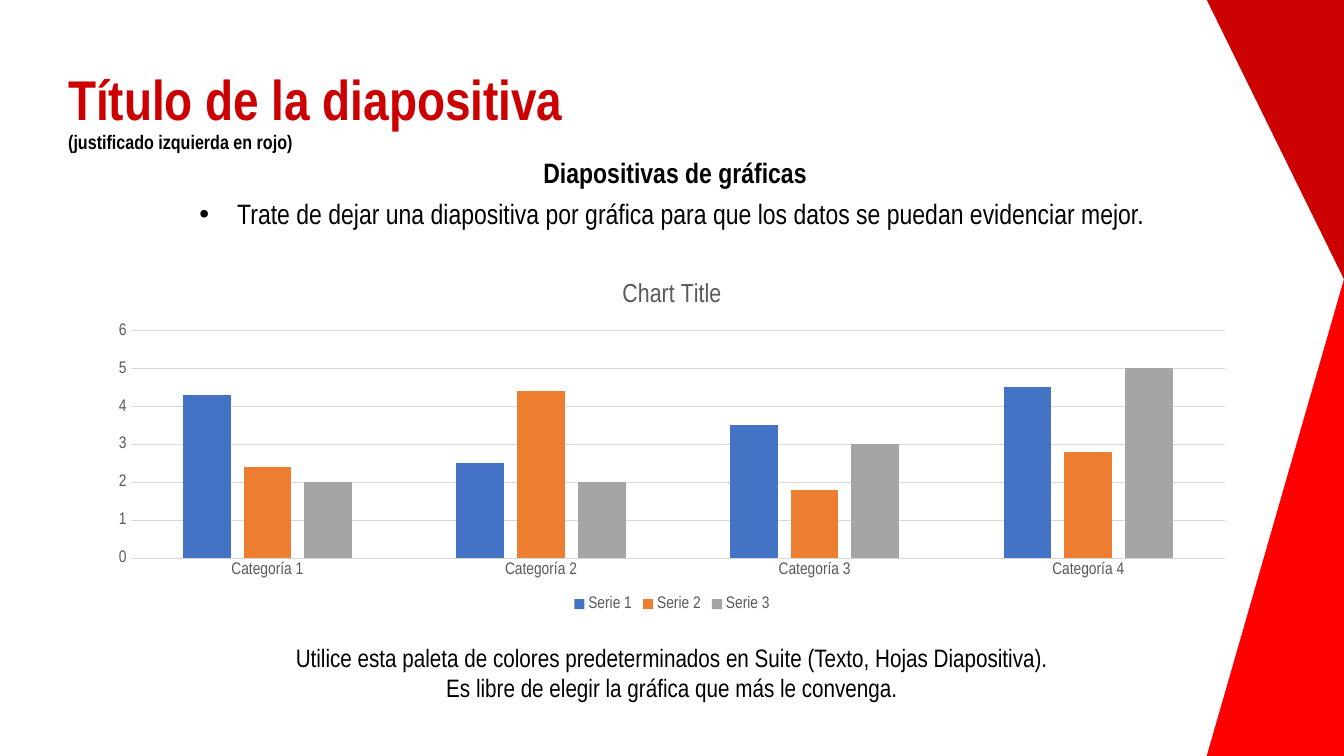
import pptx
import pptx.chart.data
import pptx.dml.color
import pptx.enum.chart
import pptx.enum.shapes
import pptx.enum.text
import pptx.oxml
import pptx.oxml.ns
import pptx.util

Pt = pptx.util.Pt
RGBColor = pptx.dml.color.RGBColor
ALIGN = pptx.enum.text.PP_ALIGN

FONT = "Arial Narrow"
DARK_RED = RGBColor(0xCC, 0x00, 0x00)
RED = RGBColor(0xFF, 0x00, 0x00)
BLACK = RGBColor(0x00, 0x00, 0x00)
GRAY = RGBColor(0x59, 0x59, 0x59)
LIGHT_GRAY = RGBColor(0xD9, 0xD9, 0xD9)
BLUE = RGBColor(0x44, 0x72, 0xC4)
ORANGE = RGBColor(0xED, 0x7D, 0x31)
MID_GRAY = RGBColor(0xA5, 0xA5, 0xA5)

SLIDE_WIDTH, SLIDE_HEIGHT = 960, 540
BAND_WIDTH, BAND_SPLIT = 98, 199.5

CATEGORIES = ["Categoría 1", "Categoría 2", "Categoría 3", "Categoría 4"]
SERIES = [
    ("Serie 1", (4.3, 2.5, 3.5, 4.5), BLUE),
    ("Serie 2", (2.4, 4.4, 1.8, 2.8), ORANGE),
    ("Serie 3", (2, 2, 3, 5), MID_GRAY),
]


def style_font(font, size, color, bold=False):
    font.name = FONT
    font.size = Pt(size)
    font.bold = bold
    font.color.rgb = color


def add_paragraph(frame, text, size, color, bold=False, align=ALIGN.CENTER):
    """Fill the empty first paragraph of the frame, or append a new one."""
    paragraph = frame.paragraphs[0]
    if paragraph.runs:
        paragraph = frame.add_paragraph()
    paragraph.alignment = align
    run = paragraph.add_run()
    run.text = text
    style_font(run.font, size, color, bold)
    return paragraph


def set_indent(paragraph, margin, hanging):
    properties = paragraph._p.get_or_add_pPr()
    properties.set("marL", str(Pt(margin)))
    properties.set("indent", str(-Pt(hanging)))
    return properties


def add_text_frame(slide, left, top, width, height):
    box = slide.shapes.add_textbox(Pt(left), Pt(top), Pt(width), Pt(height))
    box.text_frame.word_wrap = True
    return box.text_frame


def add_side_band(slide, left, top, width, height):
    """Two right triangles that meet in a point at the right edge."""
    parts = [(top, BAND_SPLIT, DARK_RED), (top + BAND_SPLIT, height - BAND_SPLIT, RED)]
    for part_top, part_height, color in parts:
        triangle = slide.shapes.add_shape(
            pptx.enum.shapes.MSO_SHAPE.RIGHT_TRIANGLE,
            Pt(left), Pt(part_top), Pt(width), Pt(part_height))
        triangle.shadow.inherit = False
        triangle.fill.solid()
        triangle.fill.fore_color.rgb = color
        triangle.line.fill.background()
        if color == DARK_RED:
            triangle.rotation = 180
        else:
            triangle.element.spPr.xfrm.set("flipH", "1")


def add_title(slide, left, top, width, height):
    title = slide.shapes.title
    title.left, title.top = Pt(left), Pt(top)
    title.width, title.height = Pt(width), Pt(height)
    frame = title.text_frame
    frame.word_wrap = True
    frame.auto_size = pptx.enum.text.MSO_AUTO_SIZE.NONE
    frame.vertical_anchor = pptx.enum.text.MSO_ANCHOR.MIDDLE
    for text, size, color in [("Título de la diapositiva", 40, DARK_RED),
                              ("(justificado izquierda en rojo)", 14, BLACK)]:
        paragraph = add_paragraph(frame, text, size, color, True, ALIGN.LEFT)
        paragraph.line_spacing = 0.9


def add_introduction(slide, left, top, width, height):
    frame = add_text_frame(slide, left, top, width, height)
    heading = add_paragraph(frame, "Diapositivas de gráficas", 20, BLACK, True)
    set_indent(heading, 36, 31.5)
    heading.line_spacing = 0.8

    advice = add_paragraph(
        frame,
        "Trate de dejar una diapositiva por gráfica para que los datos se puedan evidenciar mejor.",
        20, BLACK)
    properties = set_indent(advice, 27, 27)
    namespace = pptx.oxml.ns.nsdecls("a")
    for markup in (f'<a:buFont {namespace} typeface="Arial"/>',
                   f'<a:buChar {namespace} char="•"/>'):
        properties.append(pptx.oxml.parse_xml(markup))
    advice.line_spacing = 0.8
    advice.space_before = Pt(10)


def style_axis(axis, line_format):
    axis.major_tick_mark = pptx.enum.chart.XL_TICK_MARK.NONE
    axis.minor_tick_mark = pptx.enum.chart.XL_TICK_MARK.NONE
    style_font(axis.tick_labels.font, 12, GRAY)
    line_format.color.rgb = LIGHT_GRAY
    line_format.width = Pt(0.75)


def add_column_chart(slide, left, top, width, height):
    data = pptx.chart.data.CategoryChartData()
    data.categories = CATEGORIES
    for name, values, _ in SERIES:
        data.add_series(name, values)
    chart = slide.shapes.add_chart(
        pptx.enum.chart.XL_CHART_TYPE.COLUMN_CLUSTERED,
        Pt(left), Pt(top), Pt(width), Pt(height), data).chart
    style_font(chart.font, 10, BLACK)

    chart.has_title = True
    add_paragraph(chart.chart_title.text_frame, "Chart Title", 18.6, GRAY)
    chart.chart_title.include_in_layout = False

    chart.has_legend = True
    chart.legend.position = pptx.enum.chart.XL_LEGEND_POSITION.BOTTOM
    chart.legend.include_in_layout = False
    style_font(chart.legend.font, 12, GRAY)

    style_axis(chart.category_axis, chart.category_axis.format.line)
    value_axis = chart.value_axis
    style_axis(value_axis, value_axis.major_gridlines.format.line)
    value_axis.format.line.fill.background()
    value_axis.minimum_scale, value_axis.maximum_scale = 0, 6
    value_axis.major_unit = 1

    plot = chart.plots[0]
    plot.vary_by_categories = False
    plot.gap_width = 219
    plot.overlap = -27
    for series, (_, _, color) in zip(plot.series, SERIES):
        series.format.fill.solid()
        series.format.fill.fore_color.rgb = color


def add_closing_note(slide, left, top, width, height):
    frame = add_text_frame(slide, left, top, width, height)
    for text in (
            "Utilice esta paleta de colores predeterminados en Suite (Texto, Hojas Diapositiva).",
            "Es libre de elegir la gráfica que más le convenga."):
        add_paragraph(frame, text, 18, BLACK)


def main():
    presentation = pptx.Presentation()
    presentation.slide_width = Pt(SLIDE_WIDTH)
    presentation.slide_height = Pt(SLIDE_HEIGHT)
    title_only = presentation.slide_layouts.get_by_name("Title Only")
    slide = presentation.slides.add_slide(title_only)

    add_side_band(slide, SLIDE_WIDTH - BAND_WIDTH, 0, BAND_WIDTH, SLIDE_HEIGHT)
    add_title(slide, 41.5, 29, 538, 104)
    add_introduction(slide, 66, 112.5, 828, 69)
    add_column_chart(slide, 68.5, 188, 823, 252)
    add_closing_note(slide, 166, 455, 628, 51)
    presentation.save("out.pptx")


if __name__ == "__main__":
    main()
